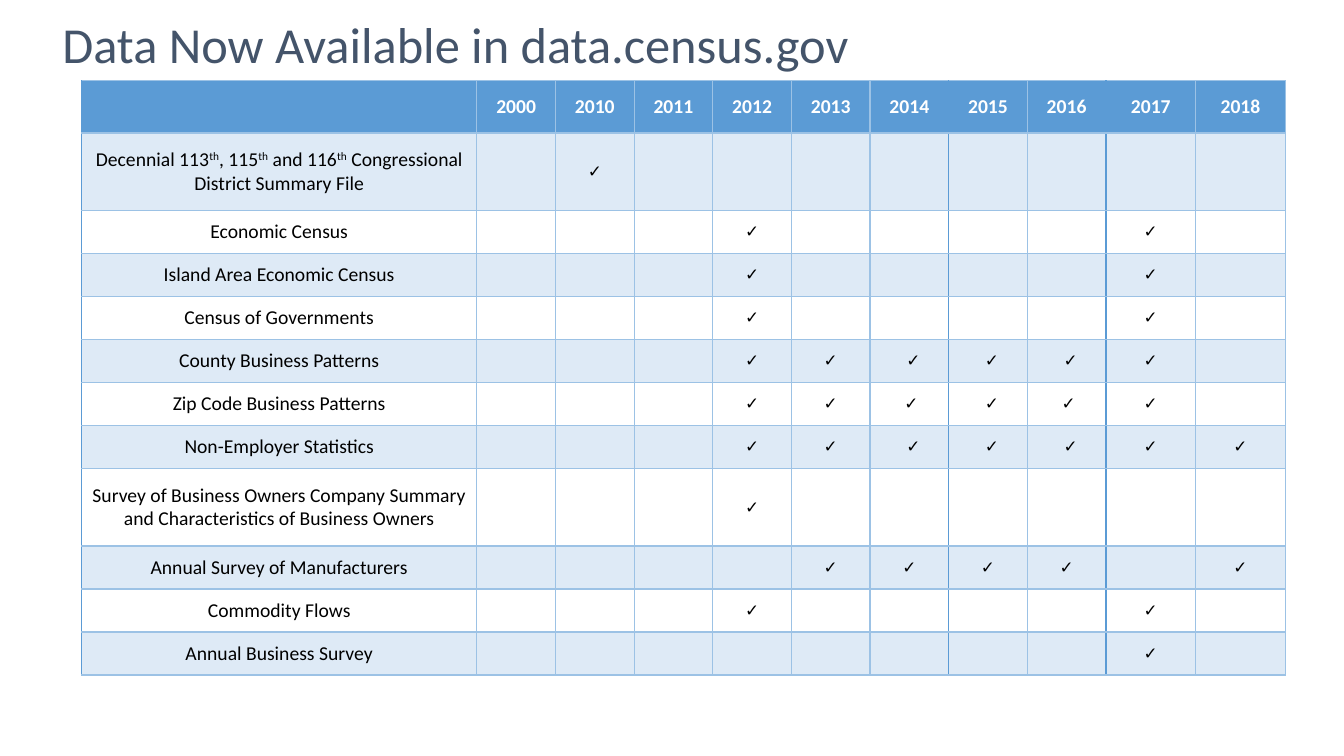
from lxml import etree
from pptx import Presentation
from pptx.dml.color import RGBColor
from pptx.enum.text import MSO_ANCHOR, PP_ALIGN
from pptx.oxml.ns import qn
from pptx.util import Inches, Pt

MIDDLE, BOTTOM = MSO_ANCHOR.MIDDLE, MSO_ANCHOR.BOTTOM
CENTER = PP_ALIGN.CENTER
HUES = {"title": "44546A", "head": "5B9BD5", "band": "DEEAF6",
        "plain": "FFFFFF", "text": "000000", "rule": "9CC2E5"}

YEARS = [2000, *range(2010, 2019)]
# Survey name (^ toggles superscript) and the years with data
DATA = [
    ("Decennial 113^th^, 115^th^ and 116^th^ Congressional District Summary File",
     [2010]),
    ("Economic Census", [2012, 2017]),
    ("Island Area Economic Census", [2012, 2017]),
    ("Census of Governments", [2012, 2017]),
    ("County Business Patterns", range(2012, 2018)),
    ("Zip Code Business Patterns", range(2012, 2018)),
    ("Non-Employer Statistics", range(2012, 2019)),
    ("Survey of Business Owners Company Summary and Characteristics of "
     "Business Owners", [2012]),
    ("Annual Survey of Manufacturers", [2013, 2014, 2015, 2016, 2018]),
    ("Commodity Flows", [2012, 2017]),
    ("Annual Business Survey", [2017]),
]
# Extra left inset of the checks for 2014, 2015 and 2016, by row
SHIFT = {5: (0.08, 0.08, 0.08), 6: (0.04, 0.08, 0.04), 7: (0.08, 0.08, 0.08)}

# Grid in inches
WIDE = [3.92] + [0.78] * 8 + [0.89] * 2
HEAD, TALL, FULL = 0.52, 0.77, 5.9
LOW = (FULL - HEAD - 2 * TALL) / 9
HIGH = [HEAD] + [TALL if len(name) > 40 else LOW for name, _ in DATA]


def style(para, size, face, hue, bold=False):
    font = para.font
    font.size, font.name, font.bold = Pt(size), face, bold
    font.color.rgb = RGBColor.from_string(HUES[hue])


def edge(cell, side, hue):
    line = etree.SubElement(cell._tc.get_or_add_tcPr(), qn("a:ln" + side),
                            w=str(Pt(1)))
    fill = etree.SubElement(line, qn("a:solidFill"))
    etree.SubElement(fill, qn("a:srgbClr"), val=HUES[hue])


deck = Presentation()
deck.slide_width, deck.slide_height = Inches(13.33), Inches(7.5)
slide = deck.slides.add_slide(deck.slide_layouts[6])

# Title
box = slide.shapes.add_textbox(Inches(0.52), 0, Inches(8.5), Inches(0.78))
frame = box.text_frame
frame.word_wrap = True
frame.vertical_anchor = BOTTOM
para = frame.paragraphs[0]
para.text = "Data Now Available in data.census.gov"
style(para, 36, "Calibri", "title")

# Table
table = slide.shapes.add_table(len(HIGH), len(WIDE), Inches(0.81), Inches(0.8),
                               Inches(sum(WIDE)), Inches(FULL)).table
table.first_row = table.horz_banding = False
for col, width in zip(table.columns, WIDE):
    col.width = Inches(width)
for row, height in zip(table.rows, HIGH):
    row.height = Inches(height)

# Cell frames, borders and fills
for r in range(len(HIGH)):
    for c in range(len(WIDE)):
        cell = table.cell(r, c)
        cell.vertical_anchor = MIDDLE
        cell.margin_left = cell.margin_right = Inches(0.07 if r else 0.03)
        cell.margin_top = cell.margin_bottom = Inches(0.04 if r else 0.02)
        edge(cell, "L", "head" if c in (0, 7, 9) else "rule")
        edge(cell, "R", "head" if c in (6, 8) else "rule")
        edge(cell, "T", "rule")
        edge(cell, "B", "rule")
        hue = "head" if r == 0 else "band" if r % 2 else "plain"
        cell.fill.solid()
        cell.fill.fore_color.rgb = RGBColor.from_string(HUES[hue])
        cell.text_frame.paragraphs[0].alignment = CENTER

# Year headings
for c, year in enumerate(YEARS, 1):
    para = table.cell(0, c).text_frame.paragraphs[0]
    para.text = str(year)
    style(para, 14, "Calibri", "plain", True)

# Survey names and checks
for r, (name, years) in enumerate(DATA, 1):
    para = table.cell(r, 0).text_frame.paragraphs[0]
    style(para, 14, "Calibri", "text")
    for i, part in enumerate(name.split("^")):
        run = para.add_run()
        run.text = part
        if i % 2:
            run._r.get_or_add_rPr().set("baseline", "30000")
    for year in years:
        cell = table.cell(r, YEARS.index(year) + 1)
        para = cell.text_frame.paragraphs[0]
        para.text = "✓"
        style(para, 12, "Arial", "text")
        if r in SHIFT and 2014 <= year <= 2016:
            cell.margin_left = Inches(0.07 + SHIFT[r][year - 2014])

deck.save("out.pptx")
